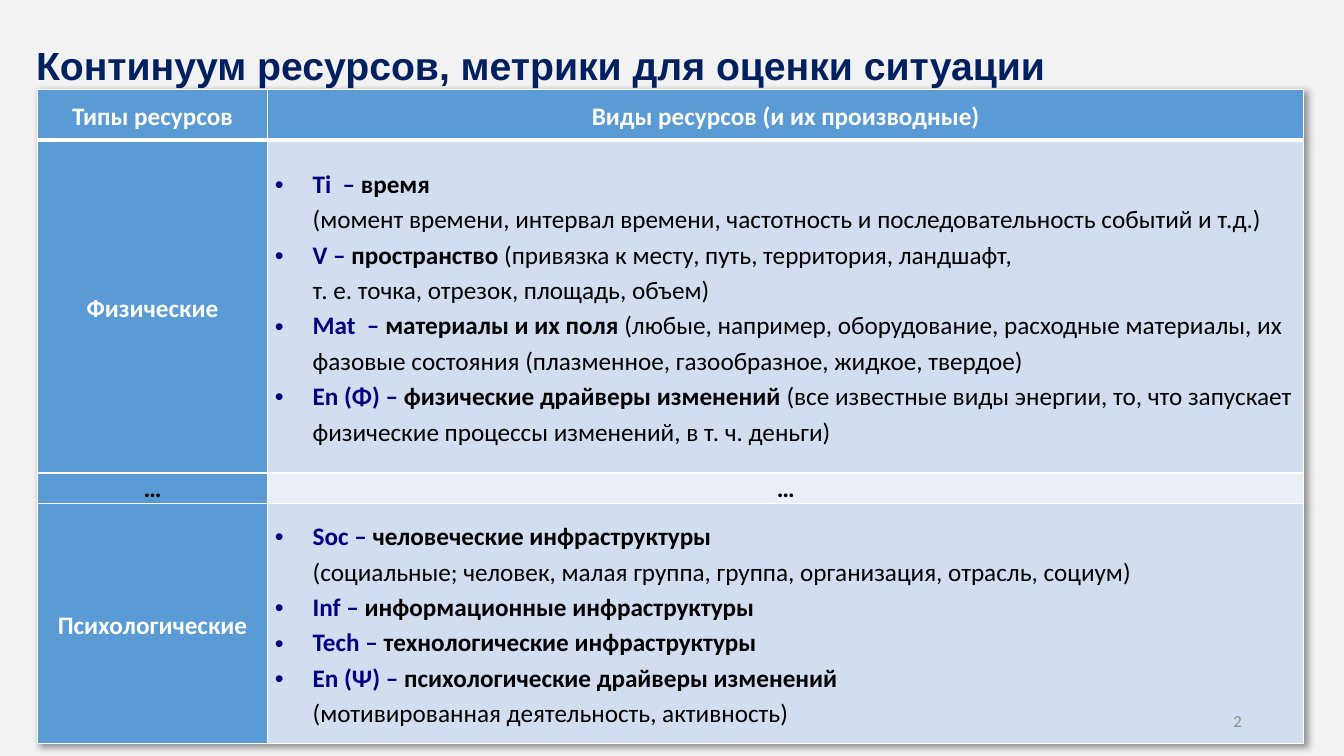
from lxml.etree import SubElement
from pptx import Presentation
from pptx.dml.color import RGBColor
from pptx.enum.text import MSO_ANCHOR, PP_ALIGN
from pptx.oxml import parse_xml
from pptx.oxml.ns import nsdecls, qn
from pptx.util import Cm, Pt

COLORS = {
    "background": "F2F2F2",
    "title": "002060",
    "symbol": "000080",
    "text": "000000",
    "white": "FFFFFF",
    "header": "5B9BD5",
    "band": "D2DEEF",
    "light_band": "EAEFF7",
    "number": "8C8C8C",
}

PHYSICAL = [
    ("Ti  – ", "время \n",
     "(момент времени, интервал времени, частотность и последовательность событий и т.д.)"),
    ("V – ", "пространство ",
     "(привязка к месту, путь, территория, ландшафт, \nт. е. точка, отрезок, площадь, объем)"),
    ("Mat  – ", "материалы и их поля ",
     "(любые, например, оборудование, расходные материалы, их фазовые состояния "
     "(плазменное, газообразное, жидкое, твердое)"),
    ("En (Φ) – ", "физические драйверы изменений ",
     "(все известные виды энергии, то, что запускает физические процессы изменений, "
     "в т. ч. деньги)"),
]
PSYCHOLOGICAL = [
    ("Soc – ", "человеческие инфраструктуры\n",
     "(социальные; человек, малая группа, группа, организация, отрасль, социум)"),
    ("Inf – ", "информационные инфраструктуры", ""),
    ("Tech – ", "технологические инфраструктуры", ""),
    ("En (Ψ) – ", "психологические драйверы изменений \n",
     "(мотивированная деятельность, активность)"),
]


def rgb(name):
    return RGBColor.from_string(COLORS[name])


def add_run(paragraph, text, color, size=18, bold=True, font="Calibri"):
    for index, line in enumerate(text.split("\n")):
        if index:
            paragraph.add_line_break()
        if line:
            run = paragraph.add_run()
            run.text = line
            run.font.name = font
            run.font.size = Pt(size)
            run.font.bold = bold
            run.font.color.rgb = rgb(color)


def add_label(slide, left, top, width, height):
    frame = slide.shapes.add_textbox(Cm(left), Cm(top), Cm(width), Cm(height)).text_frame
    frame.word_wrap = True
    return frame


def set_borders(cell, bottom_width):
    properties = cell._tc.get_or_add_tcPr()
    widths = {"a:lnL": 1, "a:lnR": 1, "a:lnT": 1, "a:lnB": bottom_width}
    for position, (side, width) in enumerate(widths.items()):
        border = parse_xml(
            f'<{side} {nsdecls("a")} w="{Pt(width)}"><a:solidFill>'
            f'<a:srgbClr val="{COLORS["white"]}"/></a:solidFill></{side}>')
        properties.insert(position, border)


def style_cell(cell, fill, bottom_width=1):
    cell.fill.solid()
    cell.fill.fore_color.rgb = rgb(fill)
    cell.vertical_anchor = MSO_ANCHOR.MIDDLE
    cell.margin_left = cell.margin_right = Cm(0.18)
    cell.margin_top = cell.margin_bottom = 0
    set_borders(cell, bottom_width)


def fill_caption(cell, text, color="white", spacing=1.15):
    paragraph = cell.text_frame.paragraphs[0]
    paragraph.alignment = PP_ALIGN.CENTER
    paragraph.line_spacing = spacing
    add_run(paragraph, text, color)


def add_bullet(paragraph):
    properties = paragraph._p.get_or_add_pPr()
    properties.set("marL", str(Cm(0.95)))
    properties.set("indent", str(-Cm(0.95)))
    SubElement(properties, qn("a:buFont")).set("typeface", "Arial")
    SubElement(properties, qn("a:buChar")).set("char", "•")


def fill_resources(cell, resources):
    frame = cell.text_frame
    for index, (symbol, name, details) in enumerate(resources):
        paragraph = frame.add_paragraph() if index else frame.paragraphs[0]
        paragraph.line_spacing = 1.15
        add_bullet(paragraph)
        add_run(paragraph, symbol, "symbol")
        add_run(paragraph, name, "text")
        add_run(paragraph, details, "text", bold=False)


def add_table_shadow(table):
    table._tbl.tblPr.insert(0, parse_xml(
        f'<a:effectLst {nsdecls("a")}>'
        f'<a:outerShdw blurRad="{Pt(4)}" dist="{Pt(3)}" dir="2700000" algn="tl" rotWithShape="0">'
        f'<a:srgbClr val="{COLORS["text"]}"><a:alpha val="40000"/></a:srgbClr>'
        '</a:outerShdw></a:effectLst>'))


def add_resource_table(slide):
    table = slide.shapes.add_table(4, 2, Cm(0.94), Cm(2.26), Cm(31.92), Cm(16.43)).table
    for column, width in zip(table.columns, (5.81, 26.11)):
        column.width = Cm(width)
    for row, height in zip(table.rows, (1.26, 8.4, 0.72, 6.05)):
        row.height = Cm(height)
    add_table_shadow(table)

    for row, fill in enumerate(("header", "band", "light_band", "band")):
        bottom_width = 1 if row else 3
        style_cell(table.cell(row, 0), "header", bottom_width)
        style_cell(table.cell(row, 1), fill, bottom_width)

    fill_caption(table.cell(0, 0), "Типы ресурсов")
    fill_caption(table.cell(0, 1), "Виды ресурсов (и их производные)")
    fill_caption(table.cell(1, 0), "Физические")
    fill_resources(table.cell(1, 1), PHYSICAL)
    for column in range(2):
        fill_caption(table.cell(2, column), "…", "text", 1.0)
    fill_caption(table.cell(3, 0), "Психологические")
    fill_resources(table.cell(3, 1), PSYCHOLOGICAL)


def add_title(slide):
    heading = add_label(slide, 0.66, 0.69, 31.9, 1.55).paragraphs[0]
    heading.line_spacing = 1.2
    add_run(heading, "Континуум ресурсов, метрики для оценки ситуации", "title", 28, font="Arial")


def add_slide_number(slide):
    frame = add_label(slide, 23.93, 17.65, 7.62, 1.02)
    frame.vertical_anchor = MSO_ANCHOR.MIDDLE
    number = frame.paragraphs[0]
    number.alignment = PP_ALIGN.RIGHT
    add_run(number, "2", "number", 12, bold=False)


def main():
    presentation = Presentation()
    presentation.slide_width = Cm(33.87)
    presentation.slide_height = Cm(19.05)
    slide = presentation.slides.add_slide(presentation.slide_layouts[6])
    slide.background.fill.solid()
    slide.background.fill.fore_color.rgb = rgb("background")
    add_title(slide)
    add_resource_table(slide)
    add_slide_number(slide)
    presentation.save("out.pptx")


if __name__ == "__main__":
    main()
